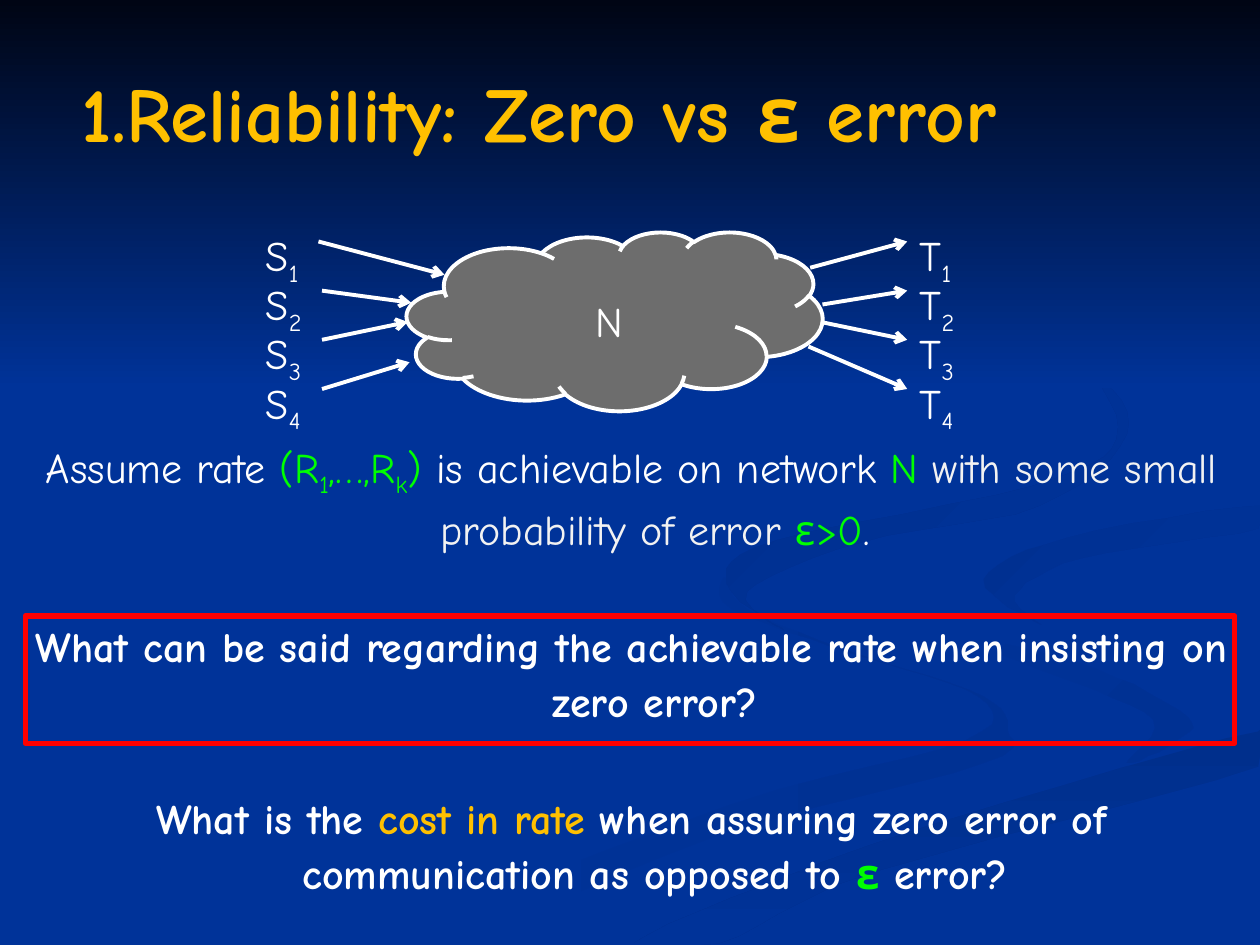
"""Build a slide comparing zero error with epsilon error in a network."""
from pptx import Presentation
from pptx.dml.color import RGBColor
from pptx.enum.shapes import MSO_CONNECTOR as Connector, MSO_SHAPE as Preset
from pptx.enum.text import MSO_ANCHOR as Anchor, MSO_AUTO_SIZE as AutoSize, PP_ALIGN as Align
from pptx.oxml.ns import qn
from pptx.util import Pt
from lxml.etree import SubElement

WHITE, PALE, GREEN, GOLD, RED = "FFFFFF", "F2F2F2", "00FF00", "FFC000", "FF0000"
BLUE, GREY = "003399", "6D6D6D"
WIDTH, HEIGHT = 720, 540


def color(value):
    return RGBColor.from_string(value)


def spline(before, start, end, after, t):
    return (start + t * (end - before) / 2
            + t ** 2 * (before - 2.5 * start + 2 * end - after / 2)
            + t ** 3 * (1.5 * (start - end) + (after - before) / 2))


def smooth(points, steps=6):
    outline, count = [], len(points)
    for index in range(count):
        corners = [points[(index + shift) % count] for shift in (-1, 0, 1, 2)]
        for step in range(steps):
            x, y = (spline(*values, step / steps) for values in zip(*corners))
            outline.append((min(x, WIDTH), min(y, HEIGHT)))
    return outline


class NetworkSlide:
    """Holds the text style and the current slide."""

    def __init__(self, presentation, font="Comic Neue", size=24):
        self.font, self.size = font, size
        self.slide = presentation.slides.add_slide(presentation.slide_layouts[1])
        background = self.slide.background.fill
        background.solid()
        background.fore_color.rgb = color(BLUE)

    def place(self, shape, box):
        shape.left, shape.top, shape.width, shape.height = map(Pt, box)
        self.slide.shapes.element.append(shape.element)
        return shape.text_frame

    def run(self, paragraph, text, fill=WHITE, bold=False, size=None, subscript=False):
        run = paragraph.add_run()
        run.text = text
        run.font.name, run.font.size, run.font.bold = self.font, Pt(size or self.size), bold
        run.font.color.rgb = color(fill)
        if subscript:
            run.font._element.set("baseline", "-25000")

    def title(self, text, box):
        frame = self.place(self.slide.shapes.title, box)
        frame.auto_size, frame.vertical_anchor = AutoSize.NONE, Anchor.MIDDLE
        frame.paragraphs[0].alignment = Align.LEFT
        self.run(frame.paragraphs[0], text, GOLD, True, 44)

    def body(self, paragraphs, box, margin_top, gap, hanging=27):
        frame = self.place(self.slide.placeholders[1], box)
        frame.auto_size, frame.margin_top = AutoSize.NONE, Pt(margin_top)
        for index, runs in enumerate(paragraphs):
            paragraph = frame.add_paragraph() if index else frame.paragraphs[0]
            paragraph.alignment, paragraph.line_spacing = Align.CENTER, 1.1
            paragraph.space_before = Pt(gap if index else 0)
            properties = paragraph._p.get_or_add_pPr()
            properties.set("marL", str(Pt(hanging)))
            properties.set("indent", str(Pt(-hanging)))
            SubElement(properties, qn("a:buNone"))
            for run in runs:
                self.run(paragraph, *run)

    def label(self, text, left, top, subscript=""):
        width = 40 if subscript else 34
        frame = self.slide.shapes.add_textbox(*map(Pt, (left, top, width, 36))).text_frame
        frame.word_wrap, frame.auto_size = False, AutoSize.SHAPE_TO_FIT_TEXT
        frame.margin_top = Pt(5.6)
        self.run(frame.paragraphs[0], text)
        if subscript:
            self.run(frame.paragraphs[0], subscript, subscript=True)

    def paint(self, shape, fill=None, line=None, weight=0, angle=0):
        shape.shadow.inherit = False
        if fill is None:
            shape.fill.background()
        elif isinstance(fill, str):
            shape.fill.solid()
            shape.fill.fore_color.rgb = color(fill)
        else:
            shape.fill.gradient()
            shape.fill.gradient_angle = (360 - angle) % 360
            for stop, value in zip(shape.fill.gradient_stops, fill):
                stop.color.rgb = color(value)
        if line:
            shape.line.color.rgb, shape.line.width = color(line), Pt(weight)
        else:
            shape.line.fill.background()

    def preset(self, kind, box, **style):
        self.paint(self.slide.shapes.add_shape(kind, *map(Pt, box)), **style)

    def ribbon(self, points, fill, angle):
        outline = smooth(points)
        builder = self.slide.shapes.build_freeform(*outline[0], scale=Pt(1))
        builder.add_line_segments(outline[1:], close=True)
        self.paint(builder.convert_to_shape(), fill, angle=angle)

    def arrow(self, start, end):
        line = self.slide.shapes.add_connector(Connector.STRAIGHT, *map(Pt, start + end))
        line.line.color.rgb, line.line.width = color(WHITE), Pt(2.25)
        SubElement(line.line._get_or_add_ln(), qn("a:tailEnd"), type="arrow")
        SubElement(line._element.spPr, qn("a:effectLst"))


RIBBONS = [
    ((BLUE, "003193"), 0, [
        (562, 398), (491, 374), (428, 349), (414, 330), (418, 348), (489, 374), (559, 398),
        (552, 423), (417, 460), (216, 539), (260, 539), (406, 479), (562, 436), (576, 418)]),
    ((BLUE, "003193"), 45, [
        (679, 410), (626, 382), (546, 359), (521, 334), (537, 360), (603, 386), (659, 411),
        (644, 436), (671, 424)]),
    (("002F8C", BLUE), 90, [
        (362, 539), (411, 539), (500, 498), (719, 438), (719, 418), (550, 466), (454, 499)]),
    (("003091", BLUE), 45, [
        (562, 331), (595, 357), (580, 340), (618, 319), (719, 302), (719, 289), (611, 307)]),
    (("002F8E", BLUE), 45, [
        (492, 310), (594, 289), (644, 248), (622, 210), (549, 168), (616, 205), (638, 251),
        (589, 278), (443, 309), (415, 333), (448, 360), (427, 338)]),
]

PARAGRAPHS = [
    [("Assume rate ",), ("(R", GREEN), ("1", GREEN, False, None, True), (",…,R", GREEN),
     ("k", GREEN, False, None, True), (") ", GREEN), ("is achievable on network ",),
     ("N ", GREEN), ("with some small probability of error ", PALE), ("ε>0", GREEN), (".",)],
    [("What can be said regarding the achievable rate when insisting on zero error?",
      WHITE, True)],
    [("What is the ", WHITE, True), ("cost in rate ", GOLD, True),
     ("when assuring zero error of communication as opposed to ", WHITE, True),
     ("ε", GREEN, True), (" error?", WHITE, True)],
]

CLOUD_ENTRIES = [(254, 157), (235, 173), (233, 184), (234, 207)]
CLOUD_EXITS = [(463, 153), (470, 174), (469, 184), (462, 198)]


def main():
    presentation = Presentation()
    presentation.slide_width, presentation.slide_height = Pt(WIDTH), Pt(HEIGHT)
    slide = NetworkSlide(presentation)
    for fill, angle, points in RIBBONS:
        slide.ribbon(points, fill, angle)
    slide.preset(Preset.RECTANGLE, (0, 0, WIDTH, 222), fill=("000514", BLUE), angle=90)
    slide.body(PARAGRAPHS, (8, 16, 705.6, 486.7), margin_top=233, gap=35)
    slide.preset(Preset.CLOUD, (232.5, 132.5, 237.6, 102.2), fill=GREY, line=WHITE, weight=2.25)
    for index, (entry, leave) in enumerate(zip(CLOUD_ENTRIES, CLOUD_EXITS)):
        top = 125.6 + 28.1 * index
        slide.label("S", 144.7, top, str(index + 1))
        slide.label("T", 518.4, top, str(index + 1))
        slide.arrow((184 if index else 182, top + 12.4), entry)
        slide.arrow(leave, (518.4, top + 12.4))
    slide.label("N", 333.4, 163.4)
    slide.preset(Preset.RECTANGLE, (14.4, 352, 691.2, 72.7), line=RED, weight=3)
    slide.title("1.Reliability: Zero vs ε error", (39.6, 18.7, 648, 90))
    presentation.save("out.pptx")


if __name__ == "__main__":
    main()
